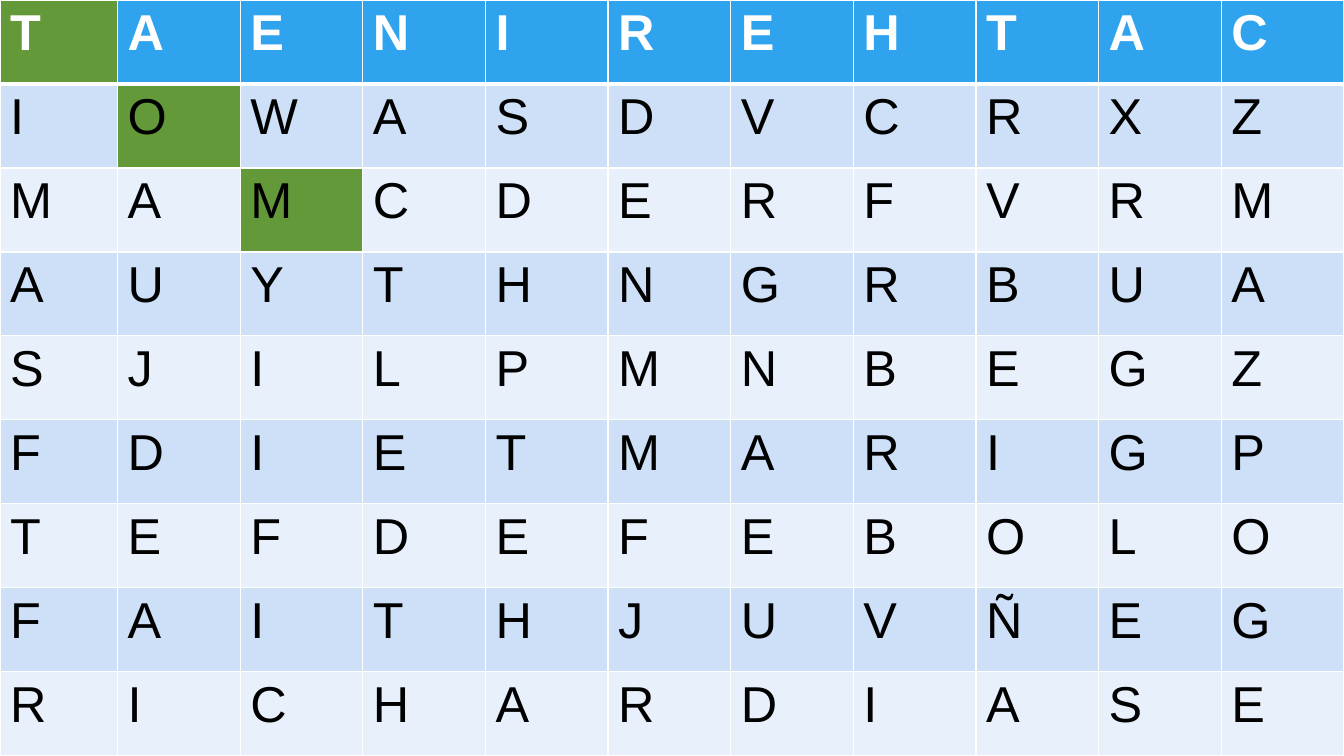
from lxml import etree
from pptx import Presentation
from pptx.dml.color import RGBColor
from pptx.oxml.ns import qn
from pptx.util import Pt

BLANK_LAYOUT = 6
SLIDE_WIDTH, SLIDE_HEIGHT = 960, 540
FIRST_COLUMN_WIDTH = 84
HEADER_RULE, GRID_RULE = 3, 1

BACKGROUND = "E8C48C"
WHITE, BLACK = "FFFFFF", "000000"
HEADER_BLUE, FOUND_GREEN = "2FA3EE", "649939"
BAND_FILLS = ("E8F0FC", "CDE0F8")

LETTER_ROWS = (
    "TAENIREHTAC",
    "IOWASDVCRXZ",
    "MAMCDERFVRM",
    "AUYTHNGRBUA",
    "SJILPMNBEGZ",
    "FDIETMARIGP",
    "TEFDEFEBOLO",
    "FAITHJUVÑEG",
    "RICHARDIASE",
)
FOUND_CELLS = {(0, 0), (1, 1), (2, 2)}


def color(value):
    return RGBColor.from_string(value)


def fill_solid(fill, value):
    fill.solid()
    fill.fore_color.rgb = color(value)


def add_borders(cell, row):
    widths = {
        "a:lnL": GRID_RULE,
        "a:lnR": GRID_RULE,
        "a:lnT": HEADER_RULE if row == 1 else GRID_RULE,
        "a:lnB": HEADER_RULE if row == 0 else GRID_RULE,
    }
    properties = cell._tc.get_or_add_tcPr()
    for tag, width in widths.items():
        line = etree.SubElement(properties, qn(tag), w=str(Pt(width)))
        solid = etree.SubElement(line, qn("a:solidFill"))
        etree.SubElement(solid, qn("a:srgbClr"), val=WHITE)


def cell_fill(row, column):
    if (row, column) in FOUND_CELLS:
        return FOUND_GREEN
    return HEADER_BLUE if row == 0 else BAND_FILLS[row % 2]


def write_letter(cell, letter, is_header):
    paragraph = cell.text_frame.paragraphs[0]
    run = paragraph.add_run()
    run.text = letter
    font_format = {"name": "Arial", "size": Pt(36), "bold": is_header}
    for name, value in font_format.items():
        setattr(run.font, name, value)
    run.font.color.rgb = color(WHITE if is_header else BLACK)


def add_letter_grid(slide):
    row_count, column_count = len(LETTER_ROWS), len(LETTER_ROWS[0])
    table = slide.shapes.add_table(
        row_count, column_count, 0, 0, Pt(SLIDE_WIDTH), Pt(SLIDE_HEIGHT)
    ).table
    column_width = (SLIDE_WIDTH - FIRST_COLUMN_WIDTH) / (column_count - 1)
    for index, column in enumerate(table.columns):
        column.width = Pt(column_width if index else FIRST_COLUMN_WIDTH)
    for row, letters in enumerate(LETTER_ROWS):
        table.rows[row].height = Pt(SLIDE_HEIGHT / row_count)
        for column, letter in enumerate(letters):
            cell = table.cell(row, column)
            write_letter(cell, letter, row == 0)
            add_borders(cell, row)
            fill_solid(cell.fill, cell_fill(row, column))


def main():
    presentation = Presentation()
    presentation.slide_width = Pt(SLIDE_WIDTH)
    presentation.slide_height = Pt(SLIDE_HEIGHT)
    slide = presentation.slides.add_slide(presentation.slide_layouts[BLANK_LAYOUT])
    fill_solid(slide.background.fill, BACKGROUND)
    add_letter_grid(slide)
    presentation.save("out.pptx")


if __name__ == "__main__":
    main()
